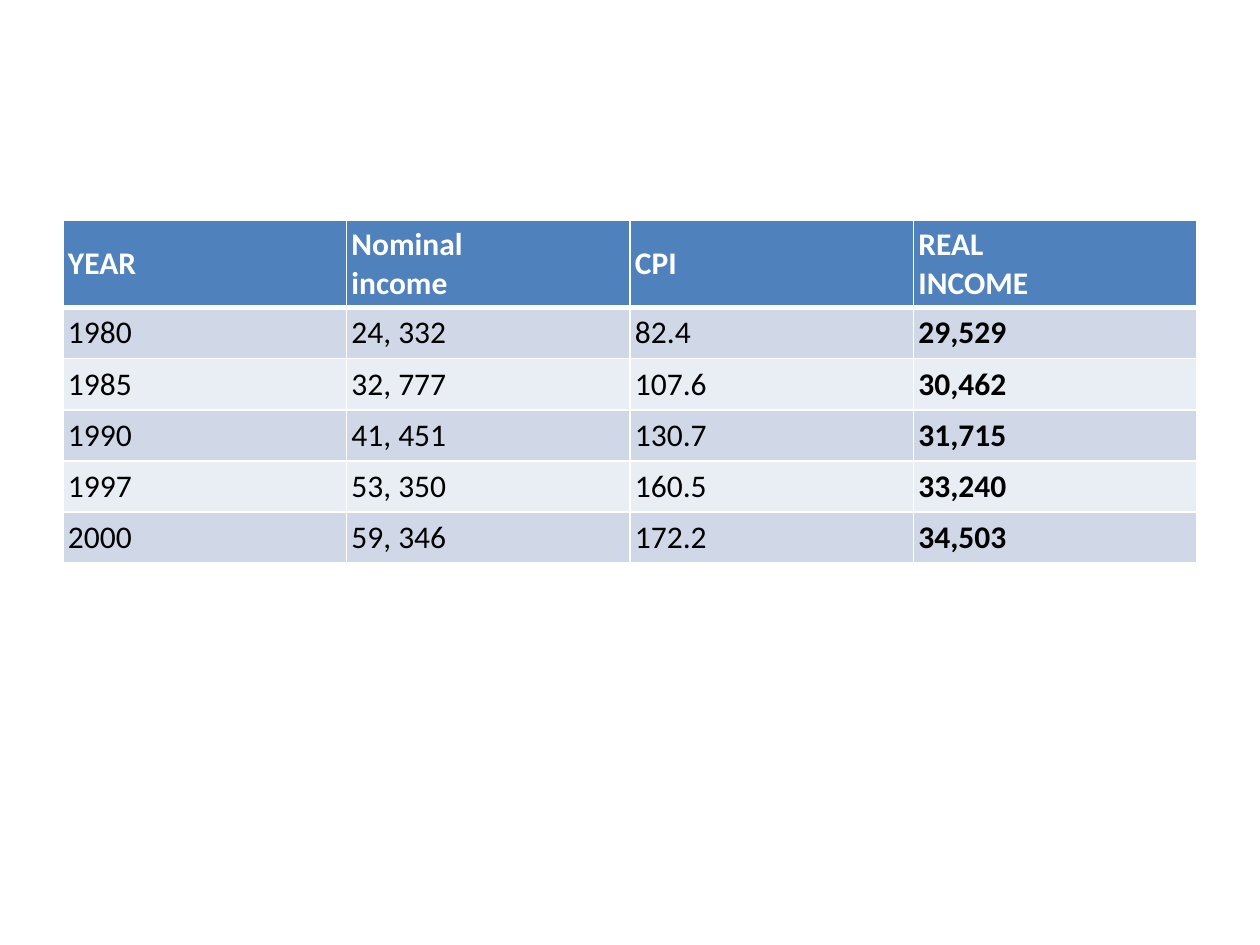
from lxml import etree
from pptx import Presentation
from pptx.dml.color import RGBColor
from pptx.enum.text import MSO_ANCHOR
from pptx.oxml.ns import qn
from pptx.util import Cm, Pt

MIDDLE = MSO_ANCHOR.MIDDLE
BLANK = 6

WHITE, BLACK, BLUE = "FFFFFF", "000000", "4F81BD"
BANDS = ("D0D8E8", "E9EDF4")
THIN, THICK = Pt(1), Pt(3)

HEADS = ("YEAR", "Nominal\vincome", "CPI", "REAL\vINCOME")
ROWS = (
    ("1980", "24, 332", "82.4", "29,529"),
    ("1985", "32, 777", "107.6", "30,462"),
    ("1990", "41, 451", "130.7", "31,715"),
    ("1997", "53, 350", "160.5", "33,240"),
    ("2000", "59, 346", "172.2", "34,503"),
)


def color(code):
    return RGBColor.from_string(code)


def apply(item, values):
    for name, value in values.items():
        setattr(item, name, value)


class Deck:
    font = {"name": "Calibri", "size": Pt(18)}
    inset = dict.fromkeys(
        ("margin_left", "margin_right", "margin_top", "margin_bottom"), Cm(0.1))

    def __init__(self, slide):
        self.slide = slide

    def border(self, cell, top, bottom):
        props = cell._tc.get_or_add_tcPr()
        sides = {"lnL": THIN, "lnR": THIN, "lnT": top, "lnB": bottom}
        for side, width in sides.items():
            line = etree.SubElement(props, qn("a:" + side), w=str(width))
            fill = etree.SubElement(line, qn("a:solidFill"))
            etree.SubElement(fill, qn("a:srgbClr"), val=WHITE)

    def cell(self, cell, text, back, ink, bold, top=THIN, bottom=THIN):
        cell.text = text
        apply(cell, {**self.inset, "vertical_anchor": MIDDLE})
        self.border(cell, top, bottom)
        cell.fill.solid()
        cell.fill.fore_color.rgb = color(back)
        font = cell.text_frame.paragraphs[0].font
        apply(font, {**self.font, "bold": bold})
        font.color.rgb = color(ink)

    def table(self, left, top, width, head, step):
        high = head + step * len(ROWS)
        grid = self.slide.shapes.add_table(
            len(ROWS) + 1, len(HEADS), left, top, width, high).table

        # Header row, with a thick rule below
        grid.rows[0].height = head
        for col, text in enumerate(HEADS):
            self.cell(grid.cell(0, col), text, BLUE, WHITE, True, bottom=THICK)

        # Banded rows, with the last column in bold
        for row, texts in enumerate(ROWS, 1):
            grid.rows[row].height = step
            back = BANDS[(row - 1) % 2]
            rule = THICK if row == 1 else THIN
            for col, text in enumerate(texts):
                last = col == len(HEADS) - 1
                self.cell(grid.cell(row, col), text, back, BLACK, last, top=rule)


def main():
    show = Presentation()
    apply(show, {"slide_width": Cm(25.4), "slide_height": Cm(19.05)})
    deck = Deck(show.slides.add_slide(show.slide_layouts[BLANK]))

    # Income table
    deck.table(Cm(1.27), Cm(4.45), Cm(22.86), head=Cm(1.74), step=Cm(1.03))
    show.save("out.pptx")


if __name__ == "__main__":
    main()
